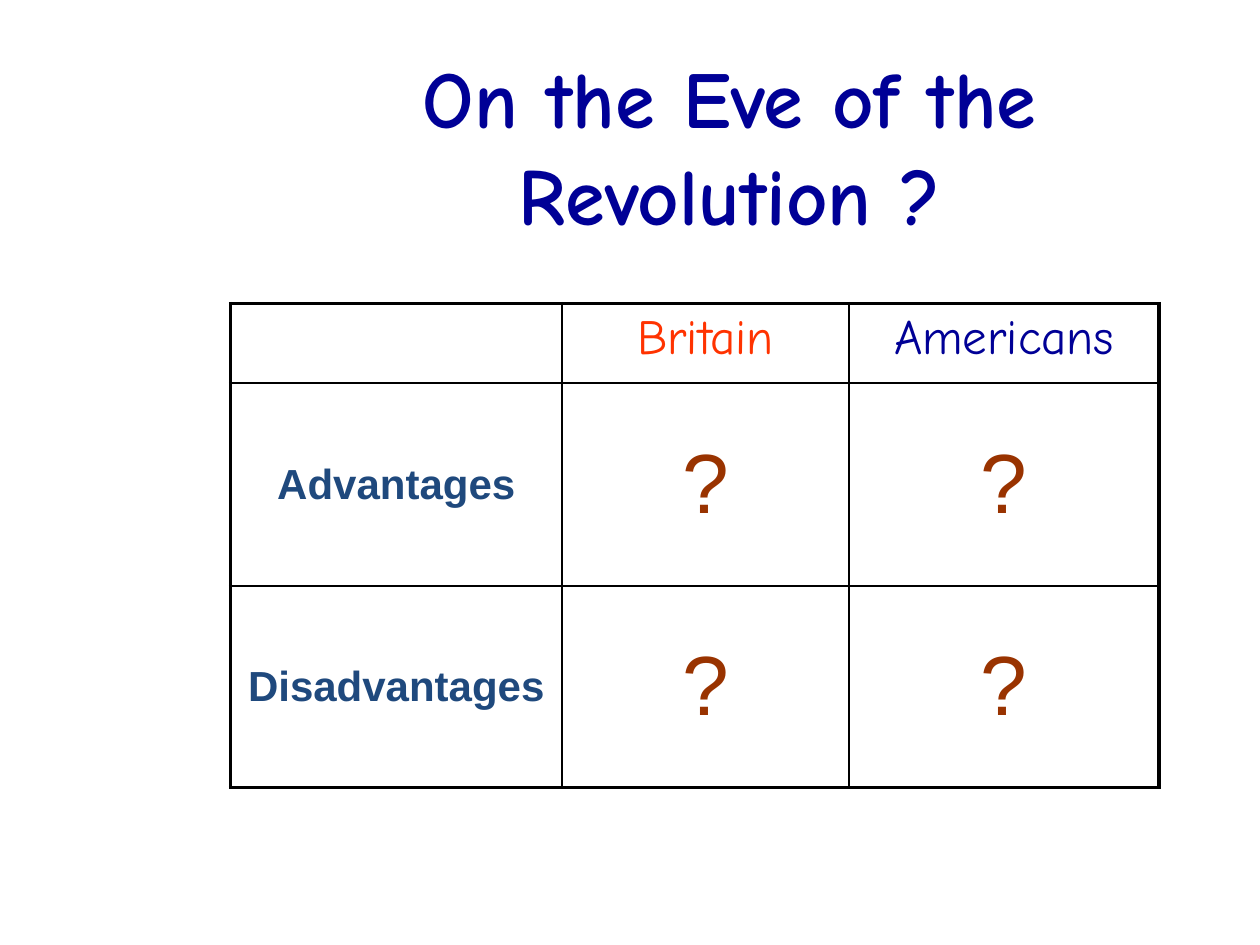
"""Build a slide comparing Britain and the Americans on the eve of the Revolution."""
import pptx
import pptx.util
import pptx.dml.color
import pptx.enum.text
import pptx.oxml
import pptx.oxml.ns

Pt = pptx.util.Pt
COLORS = {"navy": "000096", "red": "FF3300", "blue": "1F497D", "brown": "993300", "border": "000000"}


def add_text(para, text, font, size, color, bold=False):
    """Add one centred, formatted run."""
    para.alignment = pptx.enum.text.PP_ALIGN.CENTER
    para.space_before = Pt(0)
    span = para.add_run()
    span.text = text
    span.font.name = font
    span.font.size = Pt(size)
    span.font.bold = bold
    span.font.color.rgb = pptx.dml.color.RGBColor.from_string(COLORS[color])


def add_border(cell, side, width):
    """Add a solid line to one side of a cell."""
    namespace = pptx.oxml.ns.nsdecls("a")
    cell._tc.get_or_add_tcPr().append(pptx.oxml.parse_xml(
        f'<a:{side} {namespace} w="{Pt(width)}"><a:solidFill>'
        f'<a:srgbClr val="{COLORS["border"]}"/></a:solidFill></a:{side}>'))


deck = pptx.Presentation()
deck.slide_width = Pt(720)
deck.slide_height = Pt(540)
page = deck.slides.add_slide(deck.slide_layouts[5])

title = page.shapes.title
title.left, title.top, title.width, title.height = Pt(131.76), Pt(23.76), Pt(570.24), Pt(118.08)
title.text_frame.word_wrap = True
title.text_frame.auto_size = pptx.enum.text.MSO_AUTO_SIZE.SHAPE_TO_FIT_TEXT
title.text_frame.vertical_anchor = pptx.enum.text.MSO_ANCHOR.TOP
add_text(title.text_frame.paragraphs[0], "On the Eve of the Revolution ?", "Comic Neue", 46, "navy", True)

heading = ("Comic Neue", 28)
label = ("Arial", 24, "blue", True)
question = ("?", "Arial", 48, "brown")
rows = [
    [None, ("Britain", *heading, "red"), ("Americans", *heading, "navy")],
    [("Advantages", *label), question, question],
    [("Disadvantages", *label), question, question],
]
column_widths = [189.36, 164.16, 177.12]
row_heights = [45.36, 115.92, 115.2]

table = page.shapes.add_table(
    3, 3, Pt(131.76), Pt(173.52), Pt(sum(column_widths)), Pt(sum(row_heights))).table
table.first_row = False
table.horz_banding = False
for column, width in zip(table.columns, column_widths):
    column.width = Pt(width)
for row, height in zip(table.rows, row_heights):
    row.height = Pt(height)

for row_index, row in enumerate(rows):
    for column_index, content in enumerate(row):
        cell = table.cell(row_index, column_index)
        outer_sides = {"lnL": column_index == 0, "lnR": column_index == 2,
                       "lnT": row_index == 0, "lnB": row_index == 2}
        for side, is_outer in outer_sides.items():
            add_border(cell, side, 2.25 if is_outer else 1)
        cell.fill.background()
        if row_index > 0:
            cell.vertical_anchor = pptx.enum.text.MSO_ANCHOR.MIDDLE
        if content:
            add_text(cell.text_frame.paragraphs[0], *content)

deck.save("out.pptx")
